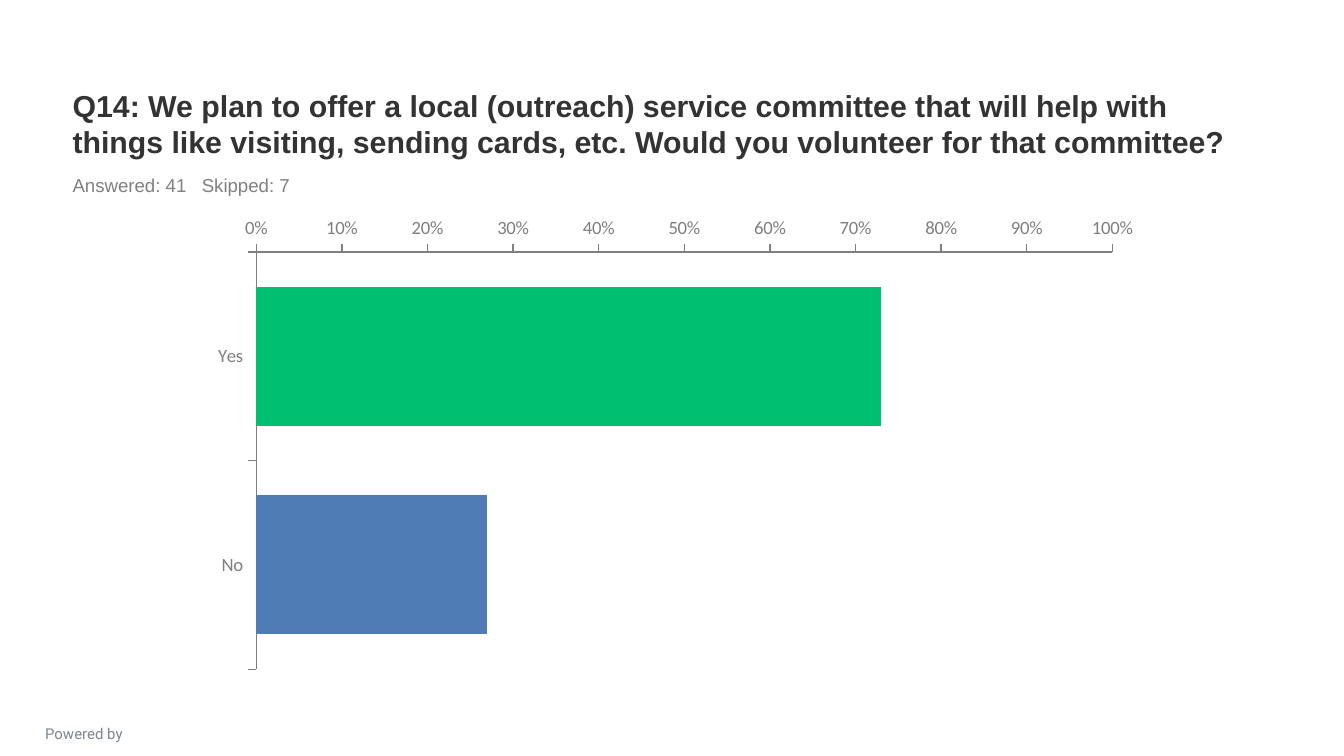
from dataclasses import dataclass

from lxml.etree import SubElement
from pptx import Presentation
from pptx.chart.data import CategoryChartData
from pptx.dml.color import RGBColor
from pptx.enum.chart import XL_CHART_TYPE as ChartType
from pptx.enum.chart import XL_TICK_LABEL_POSITION as LabelPosition
from pptx.enum.chart import XL_TICK_MARK as TickMark
from pptx.enum.text import MSO_ANCHOR as Anchor
from pptx.enum.text import MSO_AUTO_SIZE as AutoSize
from pptx.enum.text import PP_ALIGN as Align
from pptx.oxml.ns import qn
from pptx.util import Inches, Pt


@dataclass(frozen=True)
class Theme:
    heading: str = "333333"
    muted: str = "808080"
    axis: str = "7F7F7F"
    footer: str = "7C878E"
    bars: tuple = ("00BF6F", "507CB6")
    text_font: str = "Arial"
    chart_font: str = "Calibri"
    footer_font: str = "Roboto"
    title_size: float = 16.2
    body_size: float = 10
    chart_size: float = 18
    footer_size: float = 8


THEME = Theme()


def rgb(color):
    return RGBColor.from_string(color)


def style_font(font, name, size, color, bold=False):
    font.name, font.size, font.bold = name, Pt(size), bold
    font.color.rgb = rgb(color)


def place(shape, box):
    shape.left, shape.top, shape.width, shape.height = map(Inches, box)


def write_text(shape, text, *, font, size, color, bold=False,
               align=Align.LEFT, anchor=Anchor.TOP):
    """Fill a shape with one unbulleted paragraph."""
    frame = shape.text_frame
    frame.word_wrap = True
    frame.auto_size = AutoSize.NONE
    frame.vertical_anchor = anchor
    frame.text = text
    para = frame.paragraphs[0]
    para.alignment = align
    para.space_before = Pt(0)
    properties = para._p.get_or_add_pPr()
    properties.set("marL", "0")
    properties.set("indent", "0")
    SubElement(properties, qn("a:buNone"))
    style_font(para.runs[0].font, font, size, color, bold)


def add_heading(page, box, question, counts):
    """Question above, response counts in a strip along the bottom."""
    left, top, width, height = box
    strip = 0.26
    title, body = page.shapes.title, page.placeholders[1]
    place(title, (left, top, width, height - strip))
    write_text(title, question, font=THEME.text_font, size=THEME.title_size,
               color=THEME.heading, bold=True, anchor=Anchor.BOTTOM)
    place(body, (left, top + height - strip, width, strip))
    write_text(body, counts, font=THEME.text_font, size=THEME.body_size,
               color=THEME.muted)


def style_axis(axis):
    axis.has_major_gridlines = False
    axis.major_tick_mark = TickMark.OUTSIDE
    axis.minor_tick_mark = TickMark.NONE
    axis.format.line.color.rgb = rgb(THEME.axis)
    axis.format.line.width = Pt(0.75)
    style_font(axis.tick_labels.font, THEME.chart_font, THEME.body_size,
               THEME.axis)


def add_answer_chart(page, box, answers):
    data = CategoryChartData(number_format="0%")
    data.categories = list(answers)
    data.add_series("Series 1", list(answers.values()))
    chart = page.shapes.add_chart(
        ChartType.BAR_CLUSTERED, *map(Inches, box), data).chart
    chart.has_legend = chart.has_title = False
    style_font(chart.font, THEME.chart_font, THEME.chart_size, THEME.heading)

    # Answers run from top to bottom; percentages sit after the last one
    categories, values = chart.category_axis, chart.value_axis
    for axis in (categories, values):
        style_axis(axis)
    categories.reverse_order = True
    categories.crosses_at = len(answers) + 1
    categories.tick_label_position = LabelPosition.LOW
    values.minimum_scale, values.maximum_scale = 0, 1
    values.major_unit = 0.1
    values.tick_labels.number_format = "0%"
    values.tick_labels.number_format_is_linked = False

    # One colour per answer
    plot = chart.plots[0]
    plot.gap_width, plot.overlap = 50, 100
    plot.vary_by_categories = False
    series = plot.series[0]
    series.invert_if_negative = False
    for fill, color in [(series.format.fill, THEME.bars[0])] + [
            (series.points[index].format.fill, color)
            for index, color in enumerate(THEME.bars)]:
        fill.solid()
        fill.fore_color.rgb = rgb(color)


def add_footer(page, box, text):
    footer = page.shapes.add_textbox(*map(Inches, box))
    write_text(footer, text, font=THEME.footer_font, size=THEME.footer_size,
               color=THEME.footer, align=Align.CENTER)


def main():
    deck = Presentation()
    deck.slide_width, deck.slide_height = Inches(10), Inches(10 * 9 / 16)
    page = deck.slides.add_slide(deck.slide_layouts[1])
    add_footer(page, (0.05, 5.34, 1.15, 0.18), "Powered by")
    add_heading(
        page, (0.44, 0.64, 9, 0.86),
        "Q14: We plan to offer a local (outreach) service committee that will "
        "help with things like visiting, sending cards, etc. Would you "
        "volunteer for that committee?",
        "Answered: 41   Skipped: 7")
    add_answer_chart(page, (1.48, 1.55, 7.09, 3.5), {"Yes": 0.73, "No": 0.27})
    deck.save("out.pptx")


if __name__ == "__main__":
    main()
